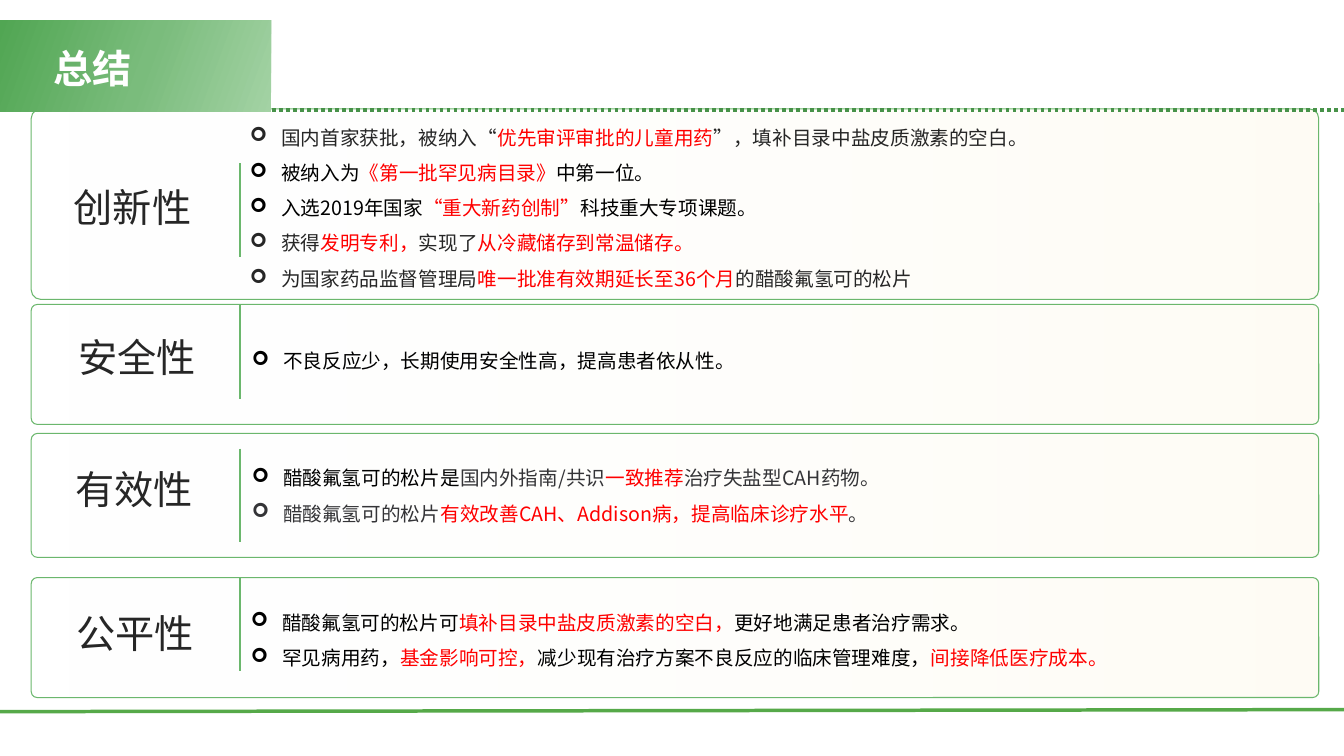
"""Builds the summary slide: four cards of labelled points under a green title banner."""
from lxml.etree import SubElement
from pptx import Presentation
from pptx.dml.color import RGBColor
from pptx.enum.dml import MSO_LINE as Dash
from pptx.enum.shapes import MSO_CONNECTOR as Link, MSO_SHAPE as Shape
from pptx.enum.text import MSO_ANCHOR as Anchor, PP_ALIGN as Align
from pptx.oxml.ns import qn
from pptx.util import Pt

PX = 9144
FONT = "Noto Sans CJK SC"
WHITE = RGBColor(0xFF, 0xFF, 0xFF)
BLACK = RGBColor(0x00, 0x00, 0x00)
INK = RGBColor(0x26, 0x26, 0x26)
SLATE = RGBColor(0x34, 0x34, 0x37)
RED = RGBColor(0xFF, 0x00, 0x00)
EDGE = RGBColor(0x6B, 0xB7, 0x6D)
DOTS = RGBColor(0x47, 0x92, 0x49)
BASE = RGBColor(0x56, 0xA9, 0x49)
CREAM = RGBColor(0xFF, 0xFB, 0xF2)
SAND = RGBColor(0xFF, 0xF0, 0xC9)
PALE = RGBColor(0xA3, 0xD2, 0xA4)
LEAF = RGBColor(0x7A, 0xBC, 0x7C)
GREEN = RGBColor(0x51, 0xA6, 0x53)


def write(text, frame, size=14, bold=False, align=Align.LEFT, space=None,
          bullet=False, pad=5, anchor=Anchor.TOP):
    """Fill a text frame with paragraphs made of (words, colour) runs."""
    frame.word_wrap = True
    frame.vertical_anchor = anchor
    frame.margin_top = frame.margin_bottom = pad * PX
    for i, runs in enumerate(text):
        para = frame.add_paragraph() if i else frame.paragraphs[0]
        para.alignment = align
        if space:
            para.line_spacing = space
        if bullet:
            props = para._p.get_or_add_pPr()
            props.set("marL", str(31 * PX))
            props.set("indent", str(-31 * PX))
            SubElement(props, qn("a:buFont"), typeface="Wingdings")
            SubElement(props, qn("a:buChar"), char="➢")
        for words, colour in runs:
            run = para.add_run()
            run.text = words
            font = run.font
            font.name, font.size, font.bold = FONT, Pt(size), bold
            font.color.rgb = colour
            SubElement(font._element, qn("a:ea"), typeface=FONT)


def blend(shape, angle, stops):
    """Give a shape a linear gradient of (place, colour, opacity) stops."""
    shape.shadow.inherit = False
    shape.fill.gradient()
    grad = shape._element.spPr.find(qn("a:gradFill"))
    grad.find(qn("a:lin")).set("ang", str(angle * 60000))
    places = grad.find(qn("a:gsLst"))
    for old in list(places):
        places.remove(old)
    for place, colour, alpha in stops:
        stop = SubElement(places, qn("a:gs"), pos=str(place * 1000))
        tint = SubElement(stop, qn("a:srgbClr"), val=str(colour))
        if alpha < 100:
            SubElement(tint, qn("a:alpha"), val=str(alpha * 1000))


deck = Presentation()
deck.slide_width, deck.slide_height = 1333 * PX, 750 * PX
slide = deck.slides.add_slide(deck.slide_layouts[5])
shapes = slide.shapes

cards = [
    dict(top=108, high=189, rule=162, label=("创新性", 43, 182, 177, 41),
         body=(238, 108, 1095, 184), text=[
             [("国内首家获批，被纳入“", INK), ("优先审评审批的儿童用药", RED),
              ("”，填补目录中盐皮质激素的空白。", INK)],
             [("被纳⼊为", BLACK), ("《第⼀批罕见病目录》", RED), ("中第一位。", BLACK)],
             [("入选2019年国家", BLACK), ("“重大新药创制”", RED),
              ("科技重大专项课题。", BLACK)],
             [("获得", INK), ("发明专利，", RED), ("实现了", INK),
              ("从冷藏储存到常温储存。", RED)],
             [("为国家药品监督管理局", INK), ("唯一批准有效期延长至36个月", RED),
              ("的醋酸氟氢可的松片", INK)]]),
    dict(top=302, high=119, rule=303, label=("安全性", 33, 331, 206, 62),
         body=(240, 330, 1068, 64), text=[
             [("不良反应少，长期使用安全性高，提高患者依从性。", BLACK)]]),
    dict(top=430, high=123, rule=445, label=("有效性", 46, 462, 174, 51),
         body=(240, 446, 1093, 103), text=[
             [("醋酸氟氢可的松片是", BLACK), ("国内外指南/共识", SLATE),
              ("一致推荐", RED), ("治疗失盐型CAH药物。", SLATE)],
             [("醋酸氟氢可的松片", SLATE),
              ("有效改善CAH、Addison病，提高临床诊疗水平", RED), ("。", SLATE)]]),
    dict(top=573, high=119, rule=573, label=("公平性", 47, 604, 174, 41),
         body=(239, 589, 1069, 116), text=[
             [("醋酸氟氢可的松片可", BLACK), ("填补目录中盐皮质激素的空白，", RED),
              ("更好地满足患者治疗需求。", BLACK)],
             [("罕见病用药，", BLACK), ("基金影响可控，", RED),
              ("减少现有治疗方案不良反应的临床管理难度，", BLACK),
              ("间接降低医疗成本。", RED)]]),
]

lines = [(0, 706, 1333, 704, BASE, 2.5, None),
         (270, 109, 1333, 109, DOTS, 2.5, Dash.ROUND_DOT)]
for card in cards:
    box = shapes.add_shape(Shape.ROUNDED_RECTANGLE, 31 * PX, card["top"] * PX,
                           1277 * PX, card["high"] * PX)
    box.adjustments[0] = 0.05
    blend(box, 0, [(0, CREAM, 0), (100, SAND, 20)])
    box.line.color.rgb, box.line.width = EDGE, Pt(0.75)
    lines.append((238, card["rule"], 238, card["rule"] + 93, EDGE, 1, None))

banner = shapes.add_shape(Shape.RECTANGLE, 0, 20 * PX, 269 * PX, 91 * PX)
blend(banner, 200, [(0, PALE, 100), (47, LEAF, 100), (100, GREEN, 100)])
banner.line.fill.background()

title = shapes.title
title.left, title.top, title.width, title.height = 43 * PX, 38 * PX, 195 * PX, 64 * PX
write([[("总结", WHITE)]], title.text_frame, size=28, bold=True,
      align=Align.JUSTIFY, space=0.9, anchor=Anchor.MIDDLE)
shapes._spTree.append(title._element)

for x1, y1, x2, y2, colour, width, dash in lines:
    line = shapes.add_connector(Link.STRAIGHT, x1 * PX, y1 * PX, x2 * PX, y2 * PX)
    line.line.color.rgb, line.line.width = colour, Pt(width)
    if dash:
        line.line.dash_style = dash
    SubElement(line._element.spPr, qn("a:effectLst"))

for card in cards:
    name, *place = card["label"]
    label = shapes.add_textbox(*[n * PX for n in place])
    write([[(name, INK)]], label.text_frame, size=28, align=Align.CENTER, pad=0)
    body = shapes.add_textbox(*[n * PX for n in card["body"]])
    write(card["text"], body.text_frame, space=1.5, bullet=True)

deck.save("out.pptx")
